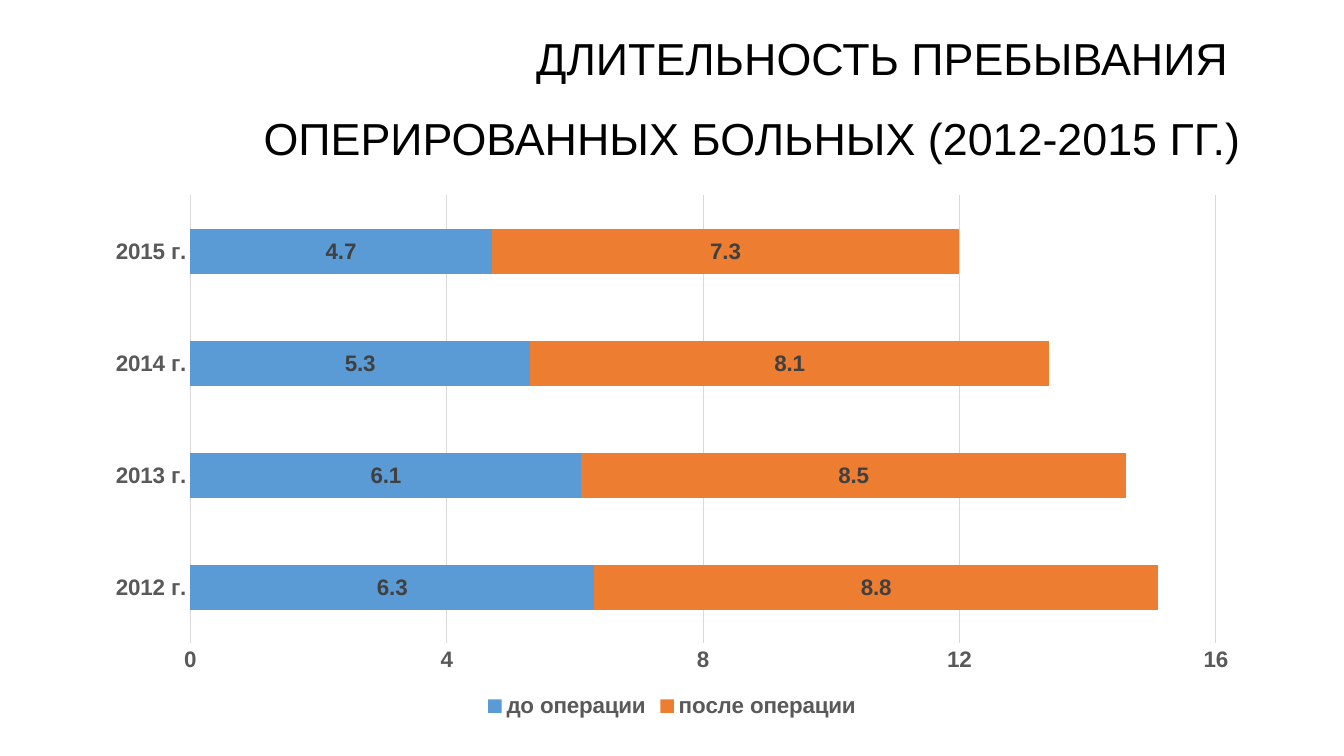
from pptx import Presentation
from pptx.chart.data import CategoryChartData
from pptx.dml.color import RGBColor
from pptx.enum.chart import XL_CHART_TYPE, XL_LABEL_POSITION, XL_LEGEND_POSITION, XL_TICK_MARK
from pptx.enum.text import MSO_ANCHOR, MSO_AUTO_SIZE, PP_ALIGN
from pptx.util import Inches, Pt

BLACK = RGBColor(0x00, 0x00, 0x00)
AXIS_GRAY = RGBColor(0x59, 0x59, 0x59)
LABEL_GRAY = RGBColor(0x40, 0x40, 0x40)
GRID_GRAY = RGBColor(0xD9, 0xD9, 0xD9)
BLUE = RGBColor(0x5B, 0x9B, 0xD5)
ORANGE = RGBColor(0xED, 0x7D, 0x31)


def apply_format(target, values):
    for name, value in values.items():
        setattr(target, name, value)


def style_font(font, color, size=16, bold=True):
    apply_format(font, {"name": "Arial", "size": Pt(size), "bold": bold})
    font.color.rgb = color


deck = Presentation()
apply_format(deck, {"slide_width": Inches(13.33), "slide_height": Inches(7.5)})
page = deck.slides.add_slide(deck.slide_layouts[5])
left = round(deck.slide_width * 0.069)
content_width = deck.slide_width - 2 * left

title = page.shapes.title
apply_format(title, {"left": left, "top": 0, "width": content_width,
                     "height": round(deck.slide_height * 0.22)})
apply_format(title.text_frame, {"word_wrap": True, "auto_size": MSO_AUTO_SIZE.NONE,
                                "vertical_anchor": MSO_ANCHOR.TOP})
para = title.text_frame.paragraphs[0]
apply_format(para, {"alignment": PP_ALIGN.RIGHT, "line_spacing": Pt(56.8),
                    "text": "ДЛИТЕЛЬНОСТЬ ПРЕБЫВАНИЯ \vОПЕРИРОВАННЫХ БОЛЬНЫХ (2012-2015 ГГ.)"})
for span in para.runs:
    style_font(span.font, BLACK, 32, False)

stay_data = CategoryChartData(number_format="General")
stay_data.categories = [f"{year} г." for year in range(2012, 2016)]
stay_data.add_series("до операции", (6.3, 6.1, 5.3, 4.7))
stay_data.add_series("после операции", (8.8, 8.5, 8.1, 7.3))
chart = page.shapes.add_chart(
    XL_CHART_TYPE.BAR_STACKED, left, round(deck.slide_height * 0.244),
    content_width, round(deck.slide_height * 0.712), stay_data).chart
chart.has_title = False
style_font(chart.font, BLACK)

chart.has_legend = True
apply_format(chart.legend, {"position": XL_LEGEND_POSITION.BOTTOM, "include_in_layout": False})
style_font(chart.legend.font, AXIS_GRAY)

years, days = chart.category_axis, chart.value_axis
for axis in (years, days):
    apply_format(axis, {"major_tick_mark": XL_TICK_MARK.NONE,
                        "minor_tick_mark": XL_TICK_MARK.NONE})
    style_font(axis.tick_labels.font, AXIS_GRAY)
apply_format(days, {"minimum_scale": 0, "maximum_scale": 16, "major_unit": 4,
                    "has_major_gridlines": True})
days.format.line.fill.background()
for line in (years.format.line, days.major_gridlines.format.line):
    line.color.rgb = GRID_GRAY
    line.width = Pt(0.75)

plot = chart.plots[0]
apply_format(plot, {"gap_width": 150, "overlap": 100, "vary_by_categories": False})
for series, color in zip(plot.series, (BLUE, ORANGE)):
    series.format.fill.solid()
    series.format.fill.fore_color.rgb = color
    apply_format(series.data_labels, {"show_value": True, "position": XL_LABEL_POSITION.CENTER})
    style_font(series.data_labels.font, LABEL_GRAY)

deck.save("out.pptx")
